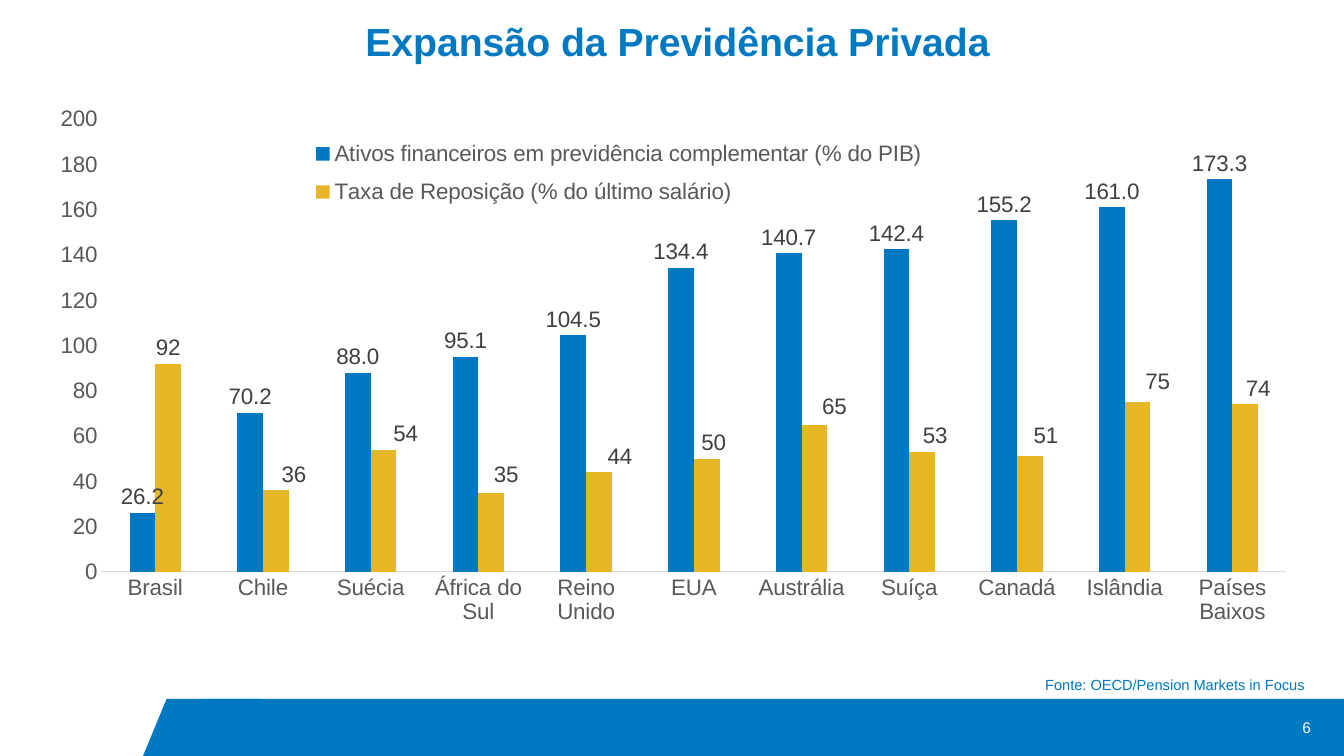
from lxml.etree import SubElement
from pptx import Presentation
from pptx.chart.data import CategoryChartData
from pptx.dml.color import RGBColor
from pptx.enum.chart import XL_CHART_TYPE, XL_LABEL_POSITION, XL_LEGEND_POSITION, XL_TICK_MARK
from pptx.enum.shapes import MSO_SHAPE
from pptx.enum.text import MSO_ANCHOR, PP_ALIGN
from pptx.oxml import parse_xml
from pptx.oxml.ns import nsdecls, qn
from pptx.util import Pt

PX = 12192000 / 1344
BLUE = RGBColor(0x00, 0x79, 0xC2)
GOLD = RGBColor(0xE6, 0xB6, 0x27)
WHITE = RGBColor(0xFF, 0xFF, 0xFF)
AXIS_GRAY = RGBColor(0x59, 0x59, 0x59)
LABEL_GRAY = RGBColor(0x40, 0x40, 0x40)
LINE_GRAY = RGBColor(0xD9, 0xD9, 0xD9)
FONT = "Arial"

COUNTRIES = ["Brasil", "Chile", "Suécia", "África do Sul", "Reino Unido", "EUA",
             "Austrália", "Suíça", "Canadá", "Islândia", "Países Baixos"]
ASSETS = [26.2, 70.2, 88.0, 95.1, 104.5, 134.4, 140.7, 142.4, 155.2, 161.0, 173.3]
REPLACEMENT = [92, 36, 54, 35, 44, 50, 65, 53, 51, 75, 74]
LABEL_SHIFTS = [(18, 0), (22, 0), (15, -2), (21, 0), (7, 0),
                (20, -2), (13, 0), (16, -5), (20, -4), (13, 0)]


def px(length):
    return round(length * PX)


def style_font(font, size, color, bold=False):
    font.name = FONT
    font.size = Pt(size)
    font.bold = bold
    font.color.rgb = color


def add_text(slide, box, text, size, color, align, bold=False,
             anchor=MSO_ANCHOR.TOP, line_spacing=None):
    frame = slide.shapes.add_textbox(*map(px, box)).text_frame
    frame.word_wrap = True
    frame.vertical_anchor = anchor
    paragraph = frame.paragraphs[0]
    paragraph.alignment = align
    paragraph.line_spacing = line_spacing
    run = paragraph.add_run()
    run.text = text
    style_font(run.font, size, color, bold)


def add_blue_shape(slide, preset, box):
    shape = slide.shapes.add_shape(preset, *map(px, box))
    shape.shadow.inherit = False
    shape.fill.solid()
    shape.fill.fore_color.rgb = BLUE
    shape.line.fill.background()
    return shape


def add_footer_band(slide, box):
    left, top, width, height = box
    slant_width = 118
    add_blue_shape(slide, MSO_SHAPE.RECTANGLE,
                   (left + slant_width // 2, top, width - slant_width // 2, height))
    inset = (slant_width - height) / 2
    slant = add_blue_shape(slide, MSO_SHAPE.FLOWCHART_MANUAL_INPUT,
                           (left + inset, top - inset, height, slant_width))
    slant.rotation = 90
    slant._element.spPr.xfrm.set("flipV", "1")
    add_text(slide, (left + width - 168, top + 10, 145, 36), "6", 11, WHITE,
             PP_ALIGN.RIGHT, anchor=MSO_ANCHOR.MIDDLE)


def manual_layout(target=None, modes=(), **fractions):
    layout = parse_xml(f"<c:layout {nsdecls('c')}/>")
    manual = SubElement(layout, qn("c:manualLayout"))
    if target:
        SubElement(manual, qn("c:layoutTarget")).set("val", target)
    for mode in modes:
        SubElement(manual, qn(f"c:{mode}")).set("val", "edge")
    for name, value in fractions.items():
        SubElement(manual, qn(f"c:{name}")).set("val", f"{value:.4f}")
    return layout


def style_axes(chart):
    for axis in (chart.category_axis, chart.value_axis):
        axis.has_major_gridlines = False
        axis.major_tick_mark = XL_TICK_MARK.NONE
        axis.minor_tick_mark = XL_TICK_MARK.NONE
        style_font(axis.tick_labels.font, 16, AXIS_GRAY)
    chart.category_axis.format.line.color.rgb = LINE_GRAY
    chart.category_axis.format.line.width = Pt(0.75)
    chart.value_axis.format.line.fill.background()
    chart.value_axis.minimum_scale = 0
    chart.value_axis.maximum_scale = 200
    chart.value_axis.major_unit = 20


def style_series(series, color, number_format):
    series.format.fill.solid()
    series.format.fill.fore_color.rgb = color
    series.invert_if_negative = False
    labels = series.data_labels
    labels.show_value = True
    labels.number_format = number_format
    labels.number_format_is_linked = False
    labels.position = XL_LABEL_POSITION.OUTSIDE_END
    style_font(labels.font, 16, LABEL_GRAY)


def shift_labels(series, width, height):
    for index, (across, down) in enumerate(LABEL_SHIFTS, start=1):
        label = series.points[index].data_label
        style_font(label.font, 16, LABEL_GRAY)
        label.position = XL_LABEL_POSITION.OUTSIDE_END
    elements = series._element.findall(".//" + qn("c:dLbl"))
    for element, (across, down) in zip(elements, LABEL_SHIFTS):
        element.insert(1, manual_layout(x=across / width, y=down / height))


def add_pension_chart(slide, box):
    width, height = box[2:]
    data = CategoryChartData()
    data.categories = COUNTRIES
    data.add_series("Ativos financeiros em previdência complementar (% do PIB)", ASSETS)
    data.add_series("Taxa de Reposição (% do último salário)", REPLACEMENT)
    chart = slide.shapes.add_chart(XL_CHART_TYPE.COLUMN_CLUSTERED, *map(px, box), data).chart
    chart.has_title = False
    chart.font.name = FONT
    chart.font.size = Pt(16)
    style_axes(chart)

    plot = chart.plots[0]
    plot.gap_width = 219
    plot.vary_by_categories = False
    assets, replacement = plot.series
    style_series(assets, BLUE, "#,##0.0")
    style_series(replacement, GOLD, "0")
    shift_labels(replacement, width, height)

    chart.has_legend = True
    legend = chart.legend
    legend.position = XL_LEGEND_POSITION.BOTTOM
    legend.include_in_layout = True
    style_font(legend.font, 16, AXIS_GRAY)
    edges = ("xMode", "yMode")
    for element, layout in (
        (chart._chartSpace.chart.plotArea,
         manual_layout("inner", edges, x=0.055, y=0.021, w=0.925, h=0.785)),
        (legend._element,
         manual_layout(None, edges, x=268 / width, y=21 / height, w=640 / width, h=90 / height)),
    ):
        for previous in element.findall(qn("c:layout")):
            element.remove(previous)
        position = 1 if element is legend._element else 0
        element.insert(position, layout)


def build_slide(presentation):
    slide = presentation.slides.add_slide(presentation.slide_layouts[6])
    add_footer_band(slide, (143, 699, 1201, 57))
    add_text(slide, (34, 18, 1287, 100), "Expansão da Previdência Privada", 28, BLUE,
             PP_ALIGN.CENTER, bold=True, line_spacing=0.9)
    add_text(slide, (28, 673, 1287, 36), "Fonte: OECD/Pension Markets in Focus", 10.5, BLUE,
             PP_ALIGN.RIGHT, line_spacing=0.9)
    add_pension_chart(slide, (31, 107, 1281, 577))


def main():
    presentation = Presentation()
    presentation.slide_width = px(1344)
    presentation.slide_height = px(756)
    build_slide(presentation)
    presentation.save("out.pptx")


if __name__ == "__main__":
    main()
